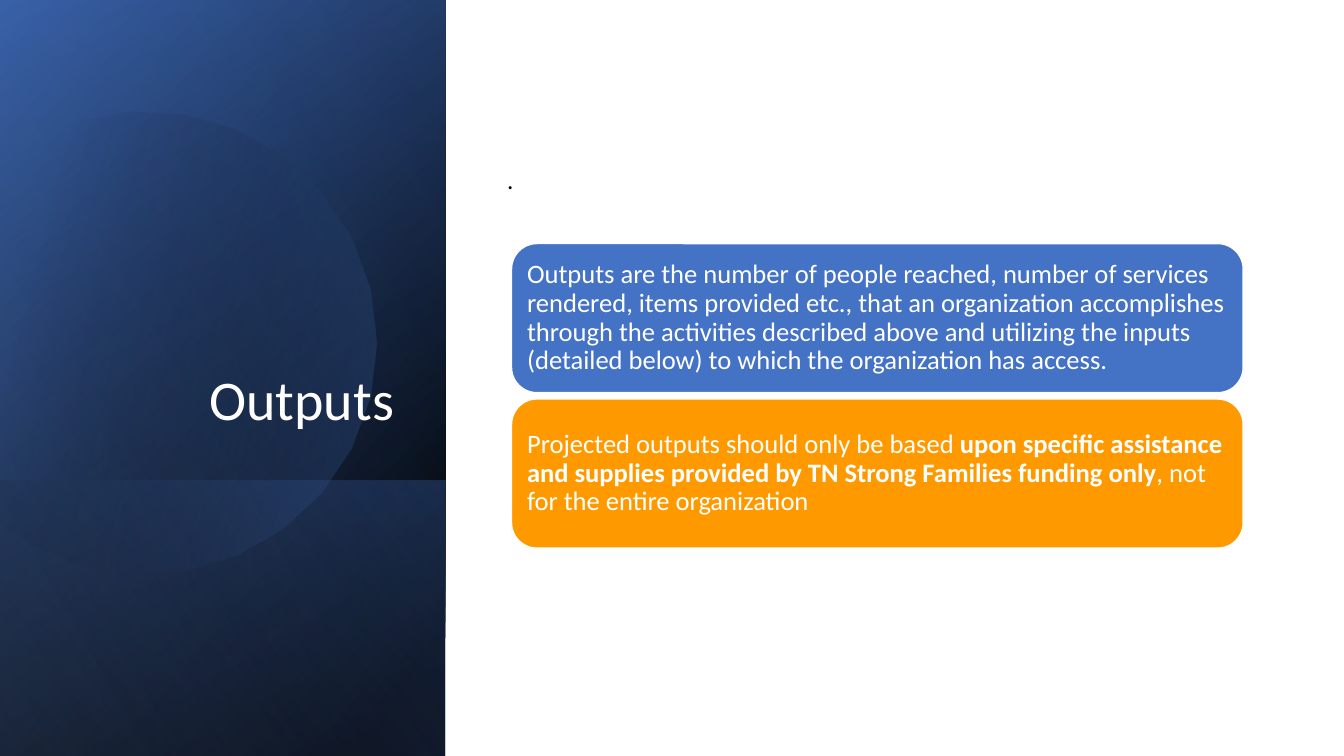
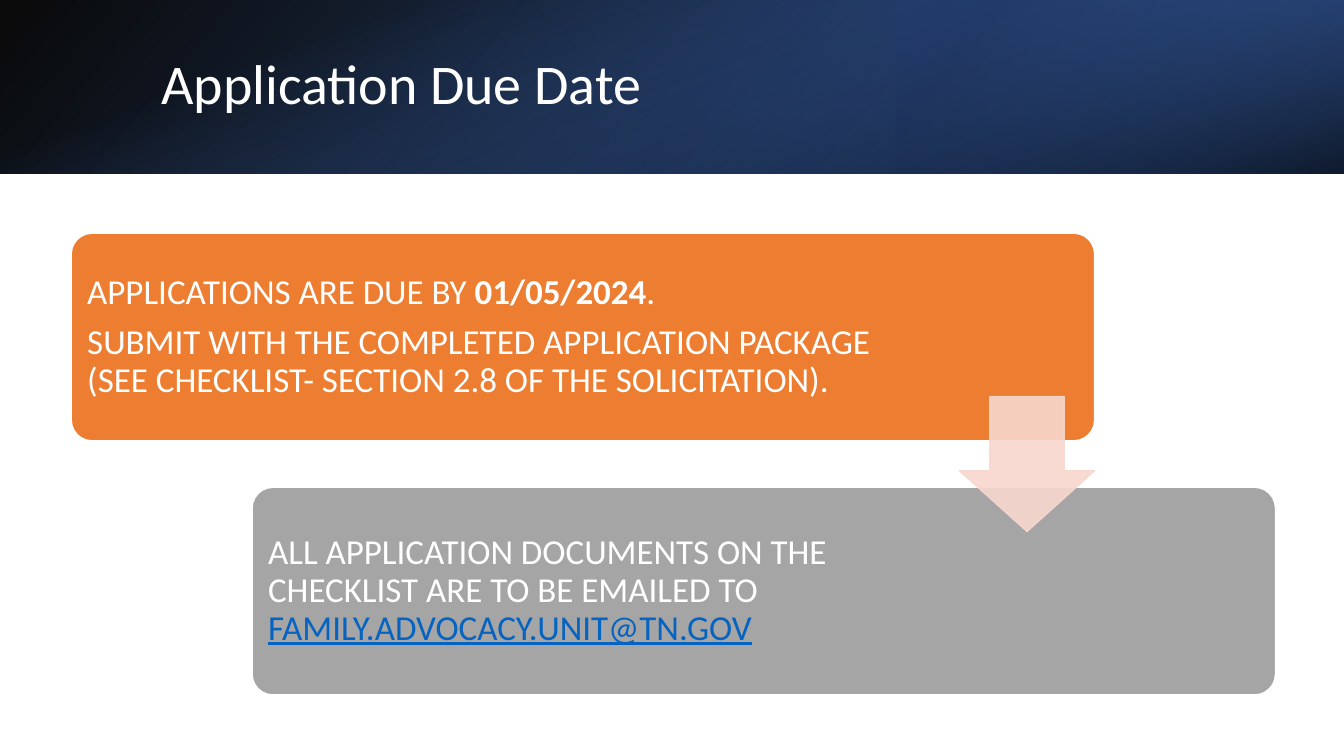
"""Build two slides: outputs definition and application due date."""
from math import cos, radians, sin

from pptx import Presentation
from pptx.dml.color import RGBColor
from pptx.enum.shapes import MSO_SHAPE
from pptx.enum.text import MSO_ANCHOR, MSO_AUTO_SIZE, PP_ALIGN
from pptx.oxml import parse_xml
from pptx.oxml.ns import nsdecls, qn
from pptx.oxml.xmlchemy import OxmlElement
from pptx.util import Pt

THEME = {
    "font": "Calibri",
    "white": "FFFFFF", "black": "000000", "blue": "4472C4", "deep": "2F5597",
    "navy": "203864", "pale": "8FAADC", "amber": "FF9900", "orange": "ED7D31",
    "gray": "A5A5A5", "blush": "F8D7CE", "link": "0563C1",
    "title": 40, "body": 18, "small": 19, "large": 25,
}

PAGE = (0, 0, 960, 540)
SIDE = (0, 0, 318.2, 540)
SIDE_FOOT = (0, 343, 318.2, 197)
BAND = (0, 0, 960, 124)
BAND_END = (640, 0, 320, 124)

OUTPUTS = {
    "title": "Outputs",
    "title_box": (36.7, 46, 252, 266.4),
    "title_align": PP_ALIGN.RIGHT,
    "title_anchor": MSO_ANCHOR.BOTTOM,
    "page": PAGE,
    "panels": [
        (SIDE, 90, True, 50, [(8, "black", 100), (100, "deep", 100)]),
        (SIDE, 90, True, 30, [(0, "black", 0), (99, "blue", 46)]),
        (SIDE_FOOT, 90, True, 130, [(2, "blue", 29), (100, "black", 30)]),
    ],
    "disc": ((-39.6, 76.4, 307.7, 329.4), 134, 343.9, 30,
             [(29, "black", 0), (100, "blue", 43)]),
    "sheen": [(SIDE, 90, True, 120, [(0, "black", 0), (99, "pale", 11)])],
    "body": (".", (355, 31.7, 516, 218)),
    "size": "small",
    "inset": 5.8,
    "corner": 0.17,
    "first": (365.4, 174, 522.6, 106.5),
    "step": (0, 111),
    "cards": [
        ("blue", 0, [
            [("Outputs are the number of people reached, number of services rendered, "
              "items provided etc., that an organization accomplishes through the "
              "activities described above and utilizing the inputs (detailed below) "
              "to which the organization has access.", {})]]),
        ("amber", 0, [
            [("Projected outputs should only be based ", {}),
             ("upon specific assistance and supplies provided by TN Strong Families "
              "funding only", {"bold": True}),
             (", not for the entire organization", {})]]),
    ],
}

DUE_DATE = {
    "title": "Application Due Date",
    "title_box": (108, 27.4, 790.6, 69),
    "title_align": PP_ALIGN.LEFT,
    "title_anchor": MSO_ANCHOR.MIDDLE,
    "panels": [
        (BAND, 0, True, 140, [(0, "black", 96), (100, "deep", 100)]),
        (BAND_END, 180, True, 320, [(19, "navy", 68), (100, "blue", 79)]),
        (BAND, 90, False, 340, [(23, "blue", 0), (99, "black", 74)]),
    ],
    "size": "large",
    "inset": 7.2,
    "corner": 0.1,
    "first": (50.9, 166.6, 731, 148.3),
    "step": (129.2, 181.5),
    "cards": [
        ("orange", 145, [
            [("APPLICATIONS ARE DUE BY ", {}), ("01/05/2024", {"bold": True}), (".", {})],
            [("SUBMIT WITH THE COMPLETED APPLICATION PACKAGE (SEE CHECKLIST- SECTION 2.8 "
              "OF THE SOLICITATION).", {})]]),
        ("gray", 226, [
            [("ALL APPLICATION DOCUMENTS ON THE CHECKLIST ARE TO BE EMAILED TO ", {}),
             ("FAMILY.ADVOCACY.UNIT@TN.GOV", {"color": "link", "underline": True})]]),
    ],
    "arrow": (685.4, 283.2, 96.5, 96.5),
}


def rgb(name):
    """Return a theme colour."""
    return RGBColor.from_string(THEME[name])


def assign(obj, values):
    """Set attributes from a dict."""
    for name, value in values.items():
        setattr(obj, name, value)


def place(sp, box):
    """Move a shape to a box given in points."""
    assign(sp, dict(zip(("left", "top", "width", "height"), map(Pt, box))))


def write(p, text, size, color="white", **font):
    """Add a formatted run to a paragraph."""
    r = p.add_run()
    r.text = text
    assign(r.font, {"name": THEME["font"], "size": Pt(THEME[size]), **font})
    r.font.color.rgb = rgb(color)


def frame(sp, anchor, **margins):
    """Prepare a wrapping text frame."""
    tf = sp.text_frame
    assign(tf, {"word_wrap": True, "auto_size": MSO_AUTO_SIZE.NONE,
                "vertical_anchor": anchor})
    assign(tf, {f"margin_{side}": Pt(value) for side, value in margins.items()})
    return tf


def add_gradient(sp, angle, stops):
    """Give a shape a linear gradient with transparent stops and no line."""
    sp.shadow.inherit = False
    sp.line.fill.background()
    sp.fill.background()
    gs = "".join(
        f'<a:gs pos="{pos * 1000}"><a:srgbClr val="{THEME[color]}">'
        f'<a:alpha val="{alpha * 1000}"/></a:srgbClr></a:gs>'
        for pos, color, alpha in stops)
    grad = parse_xml(f'<a:gradFill {nsdecls("a")} rotWithShape="1"><a:gsLst>{gs}</a:gsLst>'
                     f'<a:lin ang="{angle * 60000}" scaled="0"/></a:gradFill>')
    sp_pr = sp.element.spPr
    sp_pr.replace(sp_pr.find(qn("a:noFill")), grad)


def add_panel(s, box, rotation, flip, angle, stops):
    """Add a gradient rectangle that covers a box after rotation."""
    x, y, w, h = box
    if rotation % 180:
        x, y, w, h = x + (w - h) / 2, y + (h - w) / 2, h, w
    sp = s.shapes.add_shape(MSO_SHAPE.RECTANGLE, *map(Pt, (x, y, w, h)))
    sp.rotation = rotation
    if flip:
        sp.element.spPr.find(qn("a:xfrm")).set("flipH", "1")
    add_gradient(sp, angle, stops)


def add_disc(s, box, reach, rotation, angle, stops):
    """Add a circle whose cut side stands upright after rotation."""
    radius, segments = box[3] / 2, 20
    turns = [radians(360 - rotation - reach + 2 * reach * i / segments)
             for i in range(segments + 1)]
    points = [(Pt(radius + radius * cos(t)), Pt(radius + radius * sin(t))) for t in turns]
    fb = s.shapes.build_freeform(*points[0])
    fb.add_line_segments(points[1:], close=True)
    sp = fb.convert_to_shape()
    place(sp, box)
    sp.rotation = rotation
    add_gradient(sp, angle, stops)


def add_filled(s, kind, box, fill, line=None, adjustments=()):
    """Add a preset shape with solid fill and an optional thin line."""
    sp = s.shapes.add_shape(kind, *map(Pt, box))
    sp.shadow.inherit = False
    for i, value in enumerate(adjustments):
        sp.adjustments[i] = value
    sp.fill.solid()
    sp.fill.fore_color.rgb = rgb(fill)
    if line:
        sp.line.color.rgb = rgb(line)
        sp.line.width = Pt(1)
    else:
        sp.line.fill.background()
    return sp


def add_cards(s, data):
    """Add the rounded text cards at equal steps."""
    x, y, w, h = data["first"]
    dx, dy = data["step"]
    inset, size = data["inset"], data["size"]
    for i, (fill, extra, paragraphs) in enumerate(data["cards"]):
        sp = add_filled(s, MSO_SHAPE.ROUNDED_RECTANGLE, (x + i * dx, y + i * dy, w, h),
                        fill, "white", [data["corner"]])
        tf = frame(sp, MSO_ANCHOR.MIDDLE, left=inset, top=inset,
                   right=inset + extra, bottom=inset)
        for j, runs in enumerate(paragraphs):
            p = tf.add_paragraph() if j else tf.paragraphs[0]
            assign(p, {"alignment": PP_ALIGN.LEFT, "line_spacing": 0.9,
                       "space_before": Pt(0.35 * THEME[size] if j else 0)})
            for text, font in runs:
                write(p, text, size, **font)


def add_arrow(s, box):
    """Add the translucent down arrow."""
    sp = add_filled(s, MSO_SHAPE.DOWN_ARROW, box, "blush", "blush", [0.55, 0.45])
    for clr in sp.element.spPr.iter(qn("a:srgbClr")):
        alpha = OxmlElement("a:alpha")
        alpha.set("val", "90000")
        clr.append(alpha)


def fill_body(sp, text, box):
    """Fill the body placeholder without a bullet."""
    place(sp, box)
    p = frame(sp, MSO_ANCHOR.MIDDLE, bottom=28).paragraphs[0]
    assign(p, {"alignment": PP_ALIGN.LEFT, "space_before": Pt(0)})
    p_pr = p._p.get_or_add_pPr()
    for name in ("marL", "indent"):
        p_pr.set(name, "0")
    p_pr.append(OxmlElement("a:buNone"))
    write(p, text, "body", "black")


def build_slide(prs, data):
    """Build one slide from its content."""
    s = prs.slides.add_slide(prs.slide_layouts[1 if "body" in data else 5])
    placeholders = list(s.placeholders)
    if "page" in data:
        add_filled(s, MSO_SHAPE.RECTANGLE, data["page"], "white")
    for panel in data["panels"]:
        add_panel(s, *panel)
    if "disc" in data:
        add_disc(s, *data["disc"])
    for panel in data.get("sheen", []):
        add_panel(s, *panel)
    for sp in placeholders:
        sp.element.getparent().append(sp.element)
    title = s.shapes.title
    place(title, data["title_box"])
    p = frame(title, data["title_anchor"]).paragraphs[0]
    assign(p, {"line_spacing": 0.9, "alignment": data["title_align"]})
    write(p, data["title"], "title")
    if "body" in data:
        fill_body(placeholders[1], *data["body"])
    add_cards(s, data)
    if "arrow" in data:
        add_arrow(s, data["arrow"])


def main():
    """Create and save the presentation."""
    prs = Presentation()
    assign(prs, {"slide_width": Pt(960), "slide_height": Pt(540)})
    for data in (OUTPUTS, DUE_DATE):
        build_slide(prs, data)
    prs.save("out.pptx")


if __name__ == "__main__":
    main()
